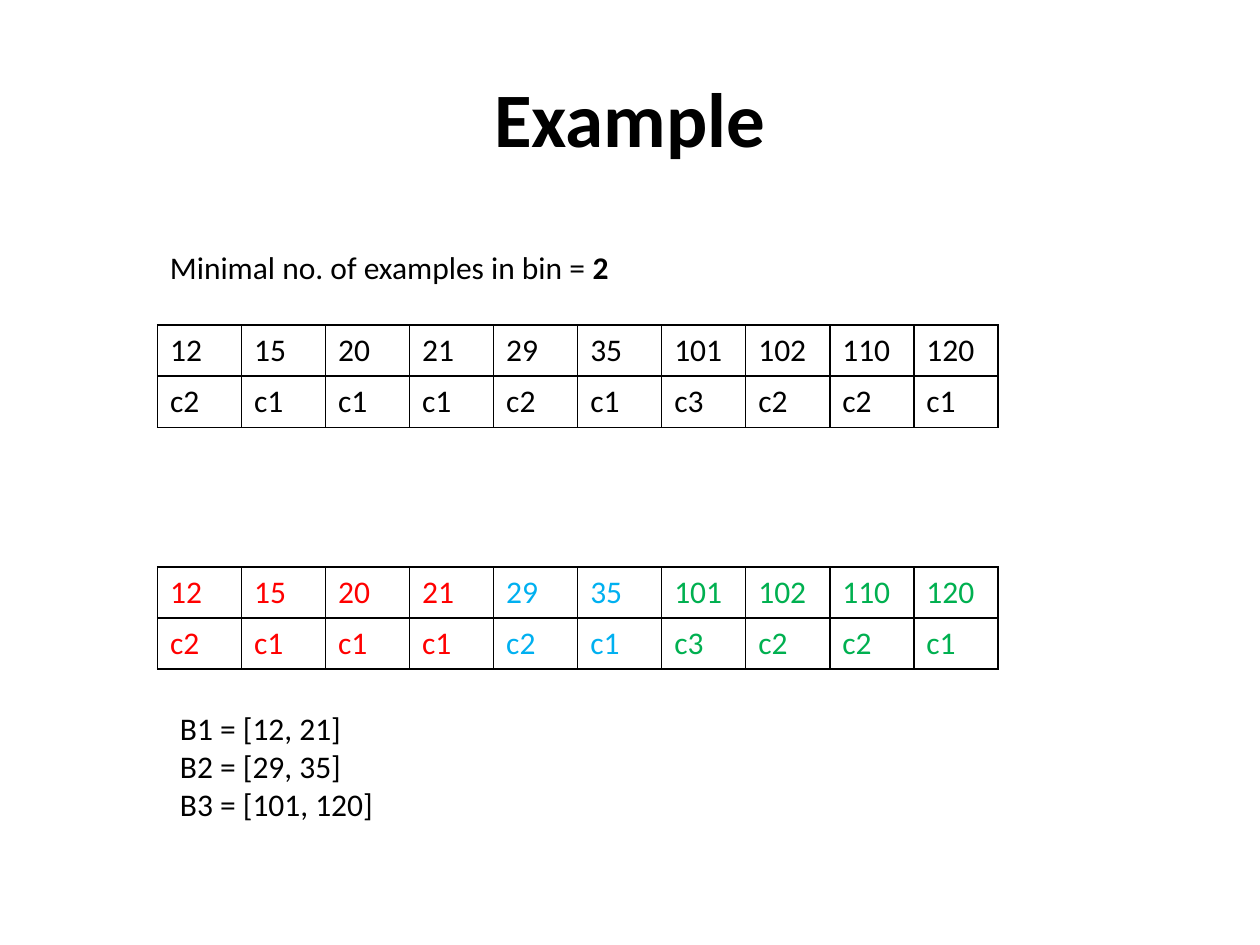
from lxml import etree
from pptx import Presentation
from pptx.dml.color import RGBColor
from pptx.enum.text import MSO_ANCHOR, MSO_AUTO_SIZE, PP_ALIGN
from pptx.oxml.ns import qn
from pptx.util import Inches, Pt

CENTER, MIDDLE = PP_ALIGN.CENTER, MSO_ANCHOR.MIDDLE
GROW = MSO_AUTO_SIZE.SHAPE_TO_FIT_TEXT

FONT, BLACK = "Calibri", "000000"
TITLE = "Example"
RULE = [("Minimal no. of examples in bin = ", False), ("2", True)]
ROWS = [
    ["12", "15", "20", "21", "29", "35", "101", "102", "110", "120"],
    ["c2", "c1", "c1", "c1", "c2", "c1", "c3", "c2", "c2", "c1"],
]
BINS = [
    ("B1 = [12, 21]", "FF0000", 4),
    ("B2 = [29, 35]", "00B0F0", 2),
    ("B3 = [101, 120]", "00B050", 4),
]
LEFT, WIDTH, ROW = 1.25, 6.67, 0.405


def paint(color):
    return RGBColor.from_string(color)


def write(par, text, size=18, color=BLACK, bold=False):
    run = par.add_run()
    run.text = text
    font = run.font
    font.name, font.size, font.bold = FONT, Pt(size), bold
    font.color.rgb = paint(color)


def add_box(slide, left, top, width, height, lines):
    """Add a text box; each line is a list of (text, bold) runs."""
    box = slide.shapes.add_textbox(*map(Inches, (left, top, width, height)))
    frame = box.text_frame
    frame.word_wrap, frame.auto_size = False, GROW
    for i, line in enumerate(lines):
        par = frame.add_paragraph() if i else frame.paragraphs[0]
        for text, bold in line:
            write(par, text, bold=bold)


def add_edges(cell):
    """Draw thin black borders; they must precede the cell's fill."""
    props = cell._tc.get_or_add_tcPr()
    for i, side in enumerate(("lnL", "lnR", "lnT", "lnB")):
        line = etree.Element(qn(f"a:{side}"), w=str(Pt(1)))
        fill = etree.SubElement(line, qn("a:solidFill"))
        etree.SubElement(fill, qn("a:srgbClr"), val=BLACK)
        props.insert(i, line)


def add_grid(slide, top, colors):
    count = len(colors)
    grid = slide.shapes.add_table(
        len(ROWS), count, Inches(LEFT), Inches(top),
        Inches(WIDTH), Inches(ROW * len(ROWS))).table
    grid.first_row = grid.horz_banding = False
    for col in grid.columns:
        col.width = Inches(WIDTH / count)
    for r, row in enumerate(ROWS):
        for c, (text, color) in enumerate(zip(row, colors)):
            cell = grid.cell(r, c)
            cell.fill.background()
            add_edges(cell)
            write(cell.text_frame.paragraphs[0], text, color=color)


def main():
    deck = Presentation()
    deck.slide_width, deck.slide_height = Inches(10), Inches(7.5)
    slide = deck.slides.add_slide(deck.slide_layouts[5])

    title = slide.shapes.title
    title.left, title.top = Inches(0.5), Inches(0.3)
    title.width, title.height = Inches(9), Inches(1.25)
    title.text_frame.vertical_anchor = MIDDLE
    head = title.text_frame.paragraphs[0]
    head.alignment = CENTER
    write(head, TITLE, size=44, bold=True)

    add_grid(slide, 2.58, [BLACK] * len(ROWS[0]))
    add_box(slide, LEFT, 1.92, 3.79, 0.4, [RULE])
    add_grid(slide, 4.5, [color for _, color, size in BINS for _ in range(size)])
    add_box(slide, 1.33, 5.58, 1.75, 1.01,
            [[(text, False)] for text, _, _ in BINS])

    deck.save("out.pptx")


if __name__ == "__main__":
    main()
